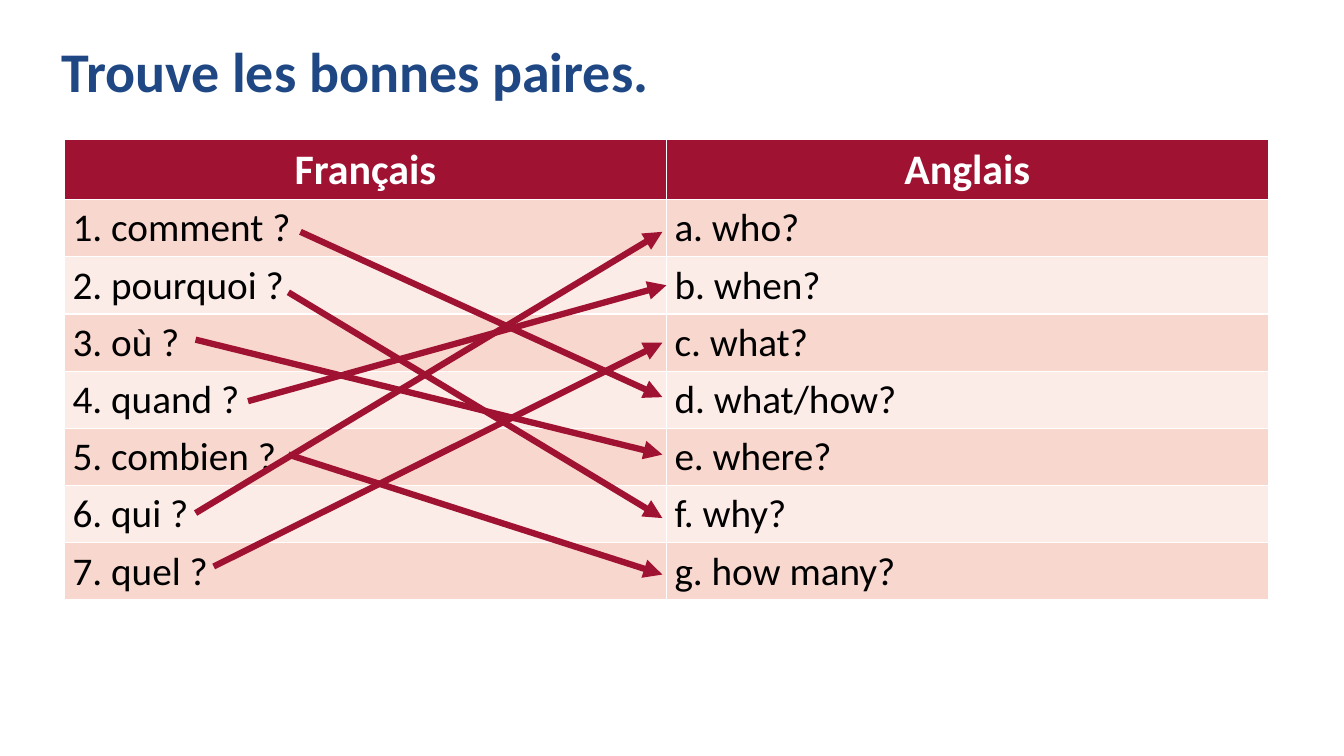
from lxml import etree
from pptx import Presentation
from pptx.dml.color import RGBColor
from pptx.enum import shapes, text
from pptx.oxml import ns
from pptx.util import Inches, Pt

FONT = "Calibri"
BLUE, CRIMSON, WHITE, BLACK = "1E4783", "9F1231", "FFFFFF", "000000"
BAND_FILLS = ["F8D7CE", "FCECE8"]
HEADER_HEIGHT = 0.6

WORD_PAIRS = [
    ("Français", "Anglais"),
    ("1. comment ?", "a. who?"),
    ("2. pourquoi ?", "b. when?"),
    ("3. où ?", "c. what?"),
    ("4. quand ?", "d. what/how?"),
    ("5. combien ?", "e. where?"),
    ("6. qui ?", "f. why?"),
    ("7. quel ?", "g. how many?"),
]

# Start and end of each answer arrow, measured from the table's top left corner
ANSWERS = [
    ((2.34, 0.92), (5.93, 2.56)),
    ((2.22, 1.52), (5.93, 3.76)),
    ((1.3, 1.99), (5.93, 3.13)),
    ((1.82, 2.6), (5.97, 1.45)),
    ((2.22, 3.13), (5.93, 4.32)),
    ((1.3, 3.71), (5.93, 0.92)),
    ((1.48, 4.24), (5.93, 2.02)),
]


def colour(value):
    return RGBColor.from_string(value)


def add_span(para, words, size, value, bold=False):
    span = para.add_run()
    span.text = words
    span.font.name = FONT
    span.font.size = Pt(size)
    span.font.bold = bold
    span.font.color.rgb = colour(value)


def add_title(page, left, top, width, height):
    box = page.shapes.add_textbox(*map(Inches, (left, top, width, height)))
    frame = box.text_frame
    frame.word_wrap = True
    frame.vertical_anchor = text.MSO_ANCHOR.MIDDLE
    para = frame.paragraphs[0]
    para.line_spacing = 0.9
    add_span(para, "Trouve les bonnes paires.", 40, BLUE, True)


def add_word_table(page, left, top, width, height):
    count = len(WORD_PAIRS)
    table = page.shapes.add_table(
        count, 2, *map(Inches, (left, top, width, height))).table
    row_height = (height - HEADER_HEIGHT) / (count - 1)
    for row, pair in enumerate(WORD_PAIRS):
        header = row == 0
        table.rows[row].height = Inches(HEADER_HEIGHT if header else row_height)
        for column, words in enumerate(pair):
            cell = table.cell(row, column)
            cell.margin_left = cell.margin_right = Inches(0.08)
            cell.margin_top = cell.margin_bottom = Inches(0.05)
            cell.fill.solid()
            cell.fill.fore_color.rgb = colour(
                CRIMSON if header else BAND_FILLS[(row - 1) % 2])
            para = cell.text_frame.paragraphs[0]
            if header:
                para.alignment = text.PP_ALIGN.CENTER
                add_span(para, words, 30, WHITE, True)
            else:
                add_span(para, words, 28, BLACK)


def add_answer_arrows(page, left, top):
    for start, end in ANSWERS:
        points = [left + start[0], top + start[1], left + end[0], top + end[1]]
        arrow = page.shapes.add_connector(
            shapes.MSO_CONNECTOR.STRAIGHT, *map(Inches, points))
        arrow.line.color.rgb = colour(CRIMSON)
        arrow.line.width = Pt(4.5)
        etree.SubElement(arrow.line._get_or_add_ln(), ns.qn("a:tailEnd"),
                         type="triangle")
        etree.SubElement(arrow._element.spPr, ns.qn("a:effectLst"))


def main():
    deck = Presentation()
    deck.slide_width, deck.slide_height = Inches(13.33), Inches(7.5)
    page = deck.slides.add_slide(deck.slide_layouts[6])
    add_title(page, 0.51, 0.4, 11.5, 0.68)
    add_word_table(page, 0.64, 1.38, 11.94, 4.57)
    add_answer_arrows(page, 0.64, 1.38)
    deck.save("out.pptx")


if __name__ == "__main__":
    main()
